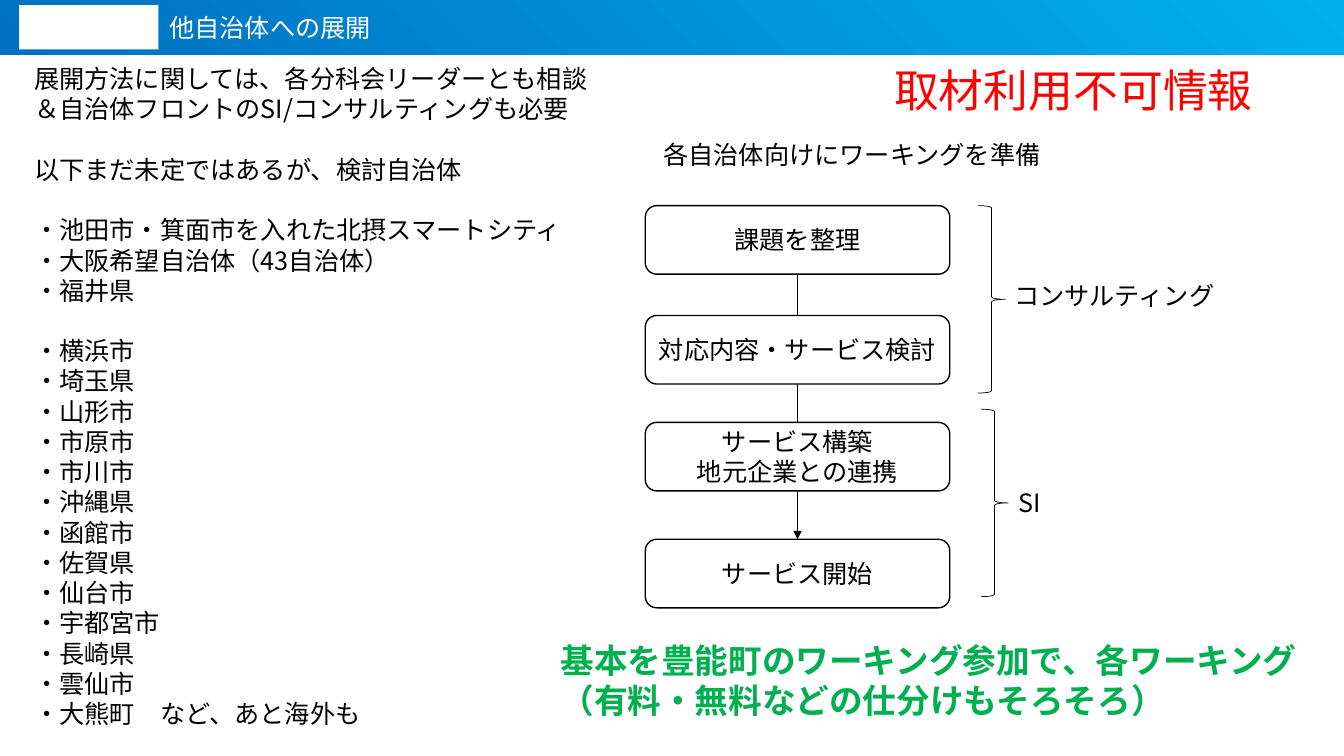
from lxml import etree
from pptx import Presentation
from pptx.dml.color import RGBColor
from pptx.enum.shapes import MSO_CONNECTOR as CONN, MSO_SHAPE as SHAPE
from pptx.enum.text import MSO_ANCHOR as ANCHOR, PP_ALIGN as ALIGN
from pptx.oxml.ns import qn
from pptx.util import Emu, Pt

WHITE = RGBColor(0xFF, 0xFF, 0xFF)
BLACK = RGBColor(0, 0, 0)
RED = RGBColor(0xFF, 0, 0)
GREEN = RGBColor(0x00, 0xB0, 0x50)
SKY = RGBColor(0x00, 0xB0, 0xF0)
BLUE = RGBColor(0x00, 0x70, 0xC0)

PX = 9144  # 100 px to the inch


def px(*lengths):
    return [Emu(n * PX) for n in lengths]


class Board:
    font = "Noto Sans CJK JP"
    leading = 1.2

    def __init__(self, prs):
        self.s = prs.slides.add_slide(prs.slide_layouts[5])

    def set_text(self, sp, groups, size=18, color=BLACK, bold=False, align=ALIGN.LEFT):
        """Fill a shape with groups of lines; a line's height parts the groups."""
        tf = sp.text_frame
        tf.text = "\n".join(line for group in groups for line in group)
        starts, count = set(), 0
        for group in groups:
            starts.add(count)
            count += len(group)
        for i, p in enumerate(tf.paragraphs):
            p.alignment = align
            p.line_spacing = Pt(size * self.leading)
            p.space_before = Pt(size * self.leading if i and i in starts else 0)
            for r in p.runs:
                r.font.name, r.font.size, r.font.bold = self.font, Pt(size), bold
                r.font.color.rgb = color
                ea = etree.SubElement(r._r.get_or_add_rPr(), qn("a:ea"))
                ea.set("typeface", self.font)

    def text(self, box, groups, **style):
        sp = self.s.shapes.add_textbox(*px(*box))
        sp.text_frame.word_wrap = False
        self.set_text(sp, groups, **style)

    def title(self, box, words, behind):
        sp = self.s.shapes.title
        sp.left, sp.top, sp.width, sp.height = px(*box)
        sp.text_frame.word_wrap = False
        sp.text_frame.vertical_anchor = ANCHOR.TOP
        self.set_text(sp, [[words]], color=WHITE)
        behind.element.addnext(sp.element)

    def shape(self, kind, box, fill=None, line=None):
        sp = self.s.shapes.add_shape(kind, *px(*box))
        sp.shadow.inherit = False
        if fill is None:
            sp.fill.background()
        else:
            sp.fill.solid()
            sp.fill.fore_color.rgb = fill
        if line is None:
            sp.line.fill.background()
        else:
            sp.line.color.rgb = BLACK
            sp.line.width = Pt(line)
        return sp

    def gradient_bar(self, box):
        sp = self.shape(SHAPE.RECTANGLE, box, WHITE)
        sp.fill.gradient()
        sp.fill.gradient_angle = 225
        for stop, color in zip(sp.fill.gradient_stops, (SKY, BLUE)):
            stop.color.rgb = color

    def step(self, box, lines):
        sp = self.shape(SHAPE.ROUNDED_RECTANGLE, box, WHITE, 1)
        sp.text_frame.word_wrap = True
        sp.text_frame.vertical_anchor = ANCHOR.MIDDLE
        self.set_text(sp, [lines], align=ALIGN.CENTER)
        return sp

    def arrow(self, x1, y1, x2, y2):
        c = self.s.shapes.add_connector(CONN.STRAIGHT, *px(x1, y1, x2, y2))
        c.line.color.rgb = BLACK
        c.line.width = Pt(1)
        sppr = c.element.spPr
        etree.SubElement(sppr.find(qn("a:ln")), qn("a:tailEnd")).set("type", "triangle")
        etree.SubElement(sppr, qn("a:effectLst"))
        return c


def main():
    prs = Presentation()
    prs.slide_width, prs.slide_height = px(1333, 750)
    b = Board(prs)

    # Header
    b.gradient_bar((0, 0, 1333, 54))
    plate = b.shape(SHAPE.RECTANGLE, (19, 5, 138, 44), WHITE)
    b.title((158, 7, 222, 40), "他自治体への展開", plate)

    # Candidate municipalities
    places = ["横浜市", "埼玉県", "山形市", "市原市", "市川市", "沖縄県", "函館市",
              "佐賀県", "仙台市", "宇都宮市", "長崎県", "雲仙市",
              "大熊町　など、あと海外も"]
    b.text((24, 58, 576, 677), [
        ["展開方法に関しては、各分科会リーダーとも相談",
         "＆自治体フロントのSI/コンサルティングも必要"],
        ["以下まだ未定ではあるが、検討自治体"],
        ["・池田市・箕面市を入れた北摂スマートシティ",
         "・大阪希望自治体（43自治体）",
         "・福井県"],
        ["・" + place for place in places],
    ])

    # Confidentiality mark
    b.text((877, 57, 379, 64), [["取材利用不可情報"]], size=32, color=RED)

    # Flow of steps, the arrow lying behind them
    b.text((648, 133, 399, 40), [["各自治体向けにワーキングを準備"]])
    flow = b.arrow(791, 272, 791, 535)
    steps = [b.step((640, y, 302, 68), lines) for y, lines in (
        (204, ["課題を整理"]),
        (313, ["対応内容・サービス検討"]),
        (419, ["サービス構築", "地元企業との連携"]),
        (535, ["サービス開始"]),
    )]
    flow.begin_connect(steps[0], 2)
    flow.end_connect(steps[-1], 0)

    # Braces and their labels
    for x, y, label, box in (
        (970, 204, "コンサルティング", (996, 273, 222, 40)),
        (973, 406, "SI", (1000, 479, 45, 40)),
    ):
        b.shape(SHAPE.RIGHT_BRACE, (x, y, 27, 186), line=0.5)
        b.text(box, [[label]])

    # Closing message
    b.text((546, 630, 761, 91),
           [["基本を豊能町のワーキング参加で、各ワーキング\v（有料・無料などの仕分けもそろそろ）"]],
           size=24, color=GREEN, bold=True)

    prs.save("out.pptx")


if __name__ == "__main__":
    main()
